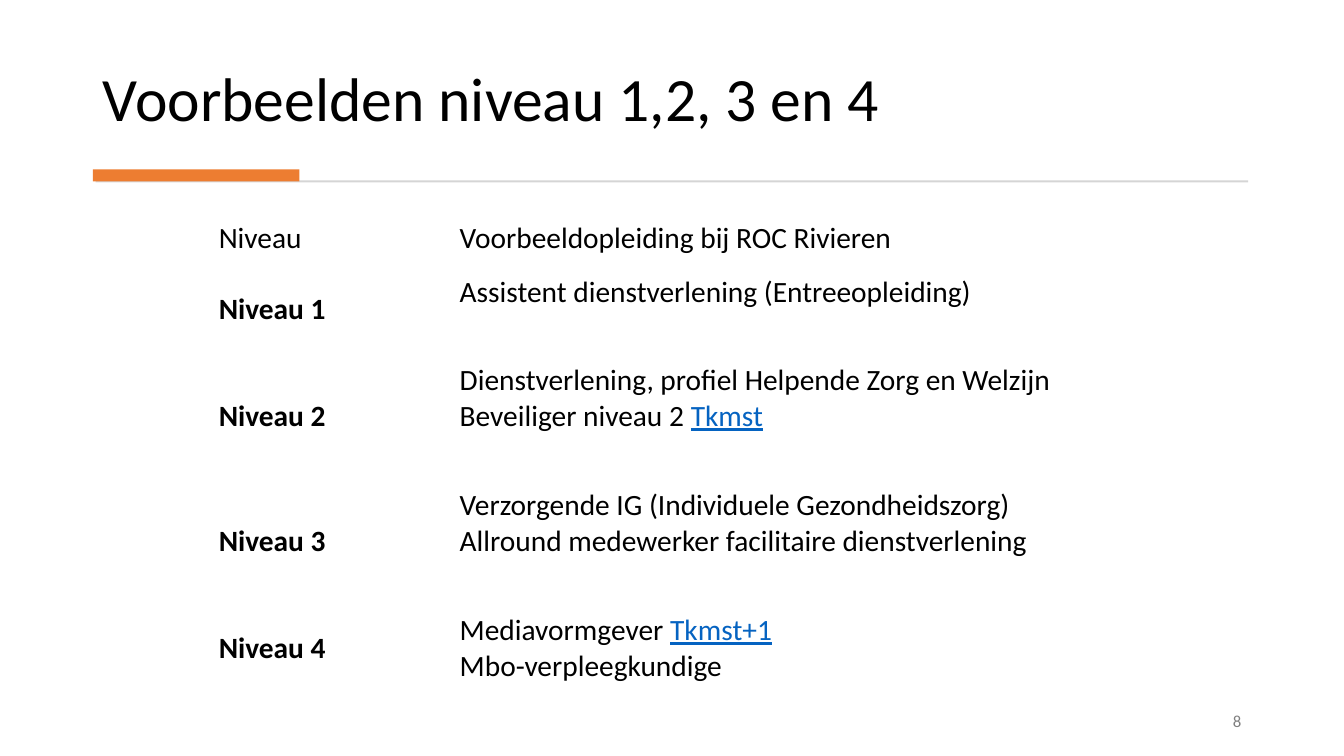
from dataclasses import dataclass

from pptx import Presentation
from pptx.dml.color import RGBColor
from pptx.enum.shapes import MSO_SHAPE
from pptx.enum.text import MSO_ANCHOR, PP_ALIGN
from pptx.util import Inches, Pt

RECT = MSO_SHAPE.RECTANGLE
TOP, MIDDLE, BOTTOM = MSO_ANCHOR.TOP, MSO_ANCHOR.MIDDLE, MSO_ANCHOR.BOTTOM
LEFT, RIGHT = PP_ALIGN.LEFT, PP_ALIGN.RIGHT


@dataclass(frozen=True)
class Theme:
    font: str = "Calibri"
    text: str = "000000"
    link: str = "0563C1"
    muted: str = "808080"
    accent: str = "ED7D31"
    rule: str = "D5D5D5"
    title_size: int = 44
    table_size: int = 21
    number_size: int = 12


THEME = Theme()

HEADER = ("Niveau", "Voorbeeldopleiding bij ROC Rivieren")
# Each level lists its courses as (course, underlined word)
LEVELS = [
    ("Niveau 1", [("Assistent dienstverlening (Entreeopleiding)", "")]),
    ("Niveau 2", [("Dienstverlening, profiel Helpende Zorg en Welzijn", ""),
                  ("Beveiliger niveau 2 ", "Tkmst")]),
    ("Niveau 3", [("Verzorgende IG (Individuele Gezondheidszorg)", ""),
                  ("Allround medewerker facilitaire dienstverlening", "")]),
    ("Niveau 4", [("Mediavormgever ", "Tkmst+1"),
                  ("Mbo-verpleegkundige", "")]),
]
COL_WIDTHS = (2.39, 6.85)
ROW_HEIGHTS = (0.52, 0.88, 1.24, 1.24, 0.88)


def add_run(p, text, size, color=THEME.text, **fmt):
    r = p.add_run()
    r.text = text
    r.font.color.rgb = RGBColor.from_string(color)
    for name, value in {"name": THEME.font, "size": Pt(size), **fmt}.items():
        setattr(r.font, name, value)


def add_title(slide, box, text):
    sp = slide.shapes.title
    sp.left, sp.top, sp.width, sp.height = map(Inches, box)
    tf = sp.text_frame
    tf.word_wrap, tf.vertical_anchor = True, BOTTOM
    p = tf.paragraphs[0]
    p.alignment, p.line_spacing = LEFT, 0.9
    add_run(p, text, THEME.title_size)


def add_bar(slide, box, color):
    sp = slide.shapes.add_shape(RECT, *map(Inches, box))
    sp.shadow.inherit = False
    sp.fill.solid()
    sp.fill.fore_color.rgb = RGBColor.from_string(color)
    sp.line.fill.background()


def add_divider(slide, box):
    x, y, w, h = box
    add_bar(slide, (x + 0.03, y + h - 0.01, w - 0.03, 0.02), THEME.rule)
    add_bar(slide, (x, y, 2.05, h), THEME.accent)


def fill_cell(cell, lines, anchor=MIDDLE, top=0.06, bold=False):
    cell.fill.background()
    margins = {"margin_left": 0.12, "margin_right": 0.12,
               "margin_top": top, "margin_bottom": 0.06}
    for name, value in margins.items():
        setattr(cell, name, Inches(value))
    cell.vertical_anchor = anchor
    tf = cell.text_frame
    for i, (text, link) in enumerate(lines):
        p = tf.add_paragraph() if i else tf.paragraphs[0]
        add_run(p, text, THEME.table_size, bold=bold)
        if link:
            add_run(p, link, THEME.table_size, THEME.link, bold=False, underline=True)


def add_level_table(slide, box):
    frame = slide.shapes.add_table(len(ROW_HEIGHTS), len(COL_WIDTHS), *map(Inches, box))
    table = frame.table
    table.first_row = table.horz_banding = False
    for col, width in zip(table.columns, COL_WIDTHS):
        col.width = Inches(width)
    for row, height in zip(table.rows, ROW_HEIGHTS):
        row.height = Inches(height)
    for c, text in enumerate(HEADER):
        fill_cell(table.cell(0, c), [(text, "")])
    for i, (level, courses) in enumerate(LEVELS, start=1):
        fill_cell(table.cell(i, 0), [(level, "")], bold=True)
        fill_cell(table.cell(i, 1), courses, anchor=TOP, top=0.09)


def add_number(slide, box, text):
    tf = slide.shapes.add_textbox(*map(Inches, box)).text_frame
    tf.word_wrap, tf.vertical_anchor = True, MIDDLE
    p = tf.paragraphs[0]
    p.alignment, p.space_after = RIGHT, Pt(6)
    add_run(p, text, THEME.number_size, THEME.muted)


def build_levels_slide(prs):
    slide = prs.slides.add_slide(prs.slide_layouts[5])
    # Heading
    add_title(slide, (0.92, 0.28, 11.49, 1.11), "Voorbeelden niveau 1,2, 3 en 4")
    add_divider(slide, (0.92, 1.68, 11.46, 0.12))
    # Slide number
    add_number(slide, (9.7, 6.95, 2.71, 0.4), "8")
    # Levels and their courses
    add_level_table(slide, (2.05, 2.11, sum(COL_WIDTHS), sum(ROW_HEIGHTS)))


def main():
    prs = Presentation()
    prs.slide_width, prs.slide_height = Inches(13.33), Inches(7.5)
    build_levels_slide(prs)
    prs.save("out.pptx")


if __name__ == "__main__":
    main()
